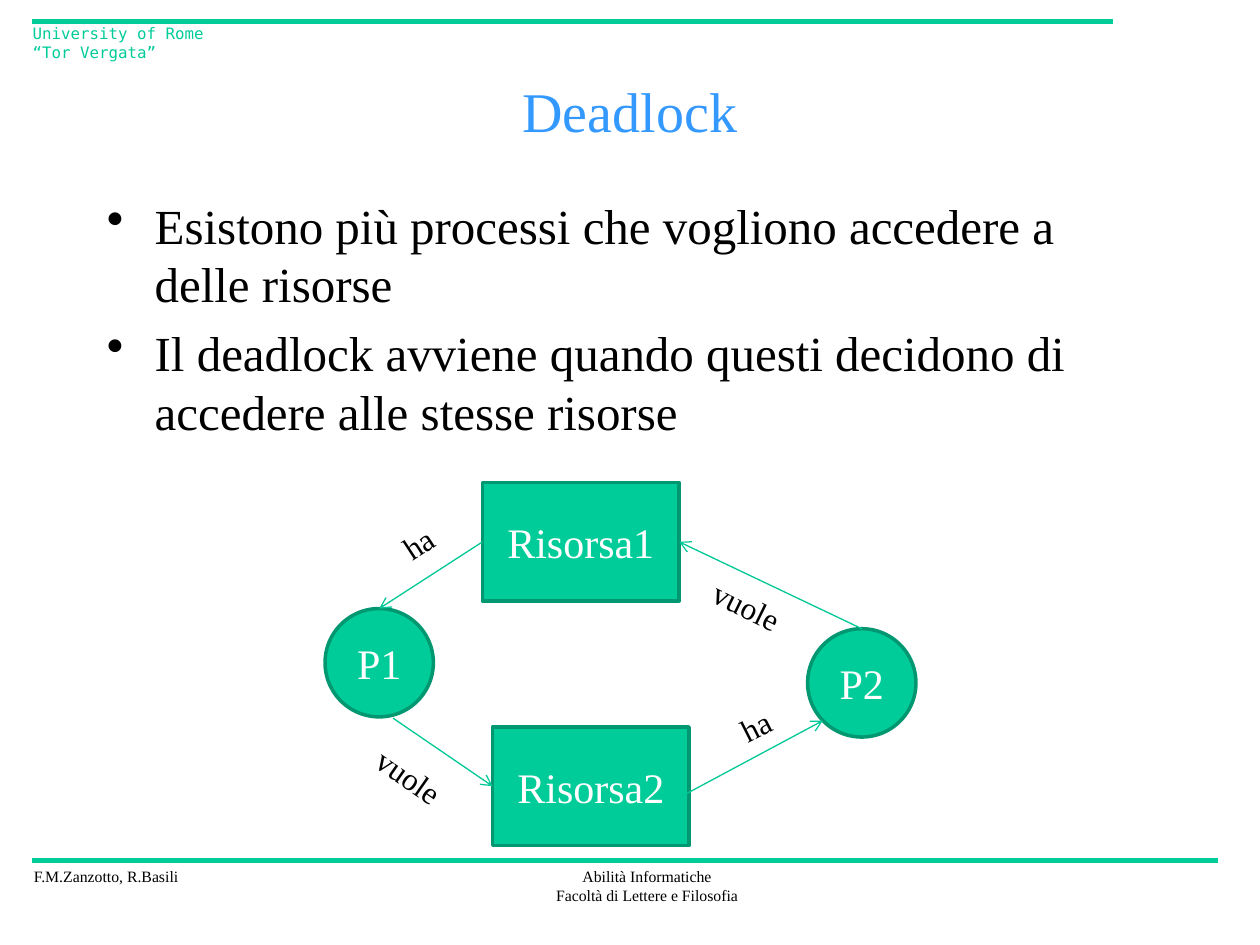
from pptx import Presentation
from pptx.dml.color import RGBColor
from pptx.enum.shapes import MSO_CONNECTOR as Link, MSO_SHAPE as Shape
from pptx.enum.text import MSO_ANCHOR as Anchor, PP_ALIGN as Align
from pptx.oxml.ns import qn
from pptx.util import Inches, Pt
from lxml.etree import SubElement

GREEN, EDGE, ARROW = "00CC99", "009771", "00C896"
BLACK, WHITE, BLUE = "000000", "FFFFFF", "3399FF"
SERIF, MONO = "Times New Roman", "DejaVu Sans Mono"


def color(value):
    """Return the colour for a hex string."""
    return RGBColor.from_string(value)


def place(item, left, top, width, height):
    """Set the position and size of a shape in inches."""
    item.left, item.top = Inches(left), Inches(top)
    item.width, item.height = Inches(width), Inches(height)


def write(frame, text, size=18, ink=BLACK, font=SERIF, align=Align.LEFT,
          anchor=Anchor.TOP, wrap=True, bullet=None, gap=0):
    """Write one paragraph per line of text in the given format."""
    frame.word_wrap = wrap
    frame.vertical_anchor = anchor
    for index, line in enumerate(text.split("\n")):
        para = frame.add_paragraph() if index else frame.paragraphs[0]
        para.text = line
        para.alignment = align
        para.space_before = Pt(gap if index else 0)
        if bullet:
            props = para._p.get_or_add_pPr()
            props.set("marL", str(Inches(0.38)))
            props.set("indent", str(-Inches(0.38)))
            SubElement(props, qn("a:buChar"), char=bullet)
        for span in para.runs:
            span.font.name = font
            span.font.size = Pt(size)
            span.font.color.rgb = color(ink)


def add_label(page, text, left, top, width, height, turn=0, wrap=False, **style):
    """Add a text box, optionally rotated."""
    box = page.shapes.add_textbox(
        Inches(left), Inches(top), Inches(width), Inches(height))
    box.rotation = turn
    write(box.text_frame, text, wrap=wrap, **style)


def add_node(page, kind, text, left, top, width, height):
    """Add a filled process or resource with its centred name."""
    node = page.shapes.add_shape(
        kind, Inches(left), Inches(top), Inches(width), Inches(height))
    node.shadow.inherit = False
    node.fill.solid()
    node.fill.fore_color.rgb = color(GREEN)
    node.line.color.rgb = color(EDGE)
    node.line.width = Pt(2)
    write(node.text_frame, text, size=24, ink=WHITE, align=Align.CENTER,
          anchor=Anchor.MIDDLE)


def add_line(page, start, end, ink=ARROW, weight=0.75, arrow=True):
    """Add a straight line, with an arrowhead at its end if wanted."""
    line = page.shapes.add_connector(
        Link.STRAIGHT, *[Inches(value) for value in (*start, *end)])
    line.line.color.rgb = color(ink)
    line.line.width = Pt(weight)
    if arrow:
        SubElement(line.line._get_or_add_ln(), qn("a:tailEnd"), type="arrow")
    SubElement(line._element.spPr, qn("a:effectLst"))


def add_frame(page):
    """Add the rules, the header and the footer of the page."""
    for y, right in ((6.83, 9.67), (0.17, 8.83)):
        add_line(page, (0.25, y), (right, y), ink=GREEN, weight=3, arrow=False)
    add_label(page, "F.M.Zanzotto, R.Basili", 0.17, 6.83, 1.36, 0.25, size=9)
    add_label(page, "Abilità Informatiche\nFacoltà di Lettere e Filosofia",
              4.31, 6.83, 1.65, 0.4, size=9, align=Align.CENTER)
    add_label(page, "University of Rome\v“Tor Vergata”", 0.16, 0.14, 1.71, 0.4,
              size=9, ink=GREEN, font=MONO, wrap=True)


def add_content(page):
    """Fill the title and add the bulleted statements."""
    title = page.shapes.title
    place(title, 0.75, 0.5, 8.5, 0.75)
    write(title.text_frame, "Deadlock", size=32, ink=BLUE, align=Align.CENTER,
          anchor=Anchor.MIDDLE)
    add_label(page,
              "Esistono più processi che vogliono accedere a delle risorse\n"
              "Il deadlock avviene quando questi decidono di accedere alle stesse risorse",
              0.75, 1.5, 8.5, 2.2, size=28, bullet="•", gap=5.6, wrap=True)


def add_diagram(page):
    """Draw the cycle of processes and resources."""
    for text, left, top in (("Risorsa1", 3.83, 3.83), ("Risorsa2", 3.91, 5.77)):
        add_node(page, Shape.RECTANGLE, text, left, top, 1.56, 0.94)
    for text, left, top in (("P1", 2.58, 4.83), ("P2", 6.41, 4.99)):
        add_node(page, Shape.OVAL, text, left, top, 0.86, 0.86)
    for start, end in (((3.12, 5.7), (3.91, 6.24)), ((5.39, 6.33), (6.53, 5.72)),
                       ((3.83, 4.3), (3.01, 4.83)), ((6.84, 4.99), (5.39, 4.3))):
        add_line(page, start, end)
    for text, left, top, width, turn in (
            ("vuole", 2.87, 5.96, 0.76, 34.9), ("vuole", 5.55, 4.61, 0.76, 26.3),
            ("ha", 3.1, 4.11, 0.44, 326.8), ("ha", 5.78, 5.56, 0.44, 333.3)):
        add_label(page, text, left, top, width, 0.4, turn=turn)


def main():
    """Build and save the deck."""
    deck = Presentation()
    deck.slide_width, deck.slide_height = Inches(10), Inches(7.5)
    page = deck.slides.add_slide(deck.slide_layouts[5])
    add_frame(page)
    add_content(page)
    add_diagram(page)
    deck.save("out.pptx")


if __name__ == "__main__":
    main()
